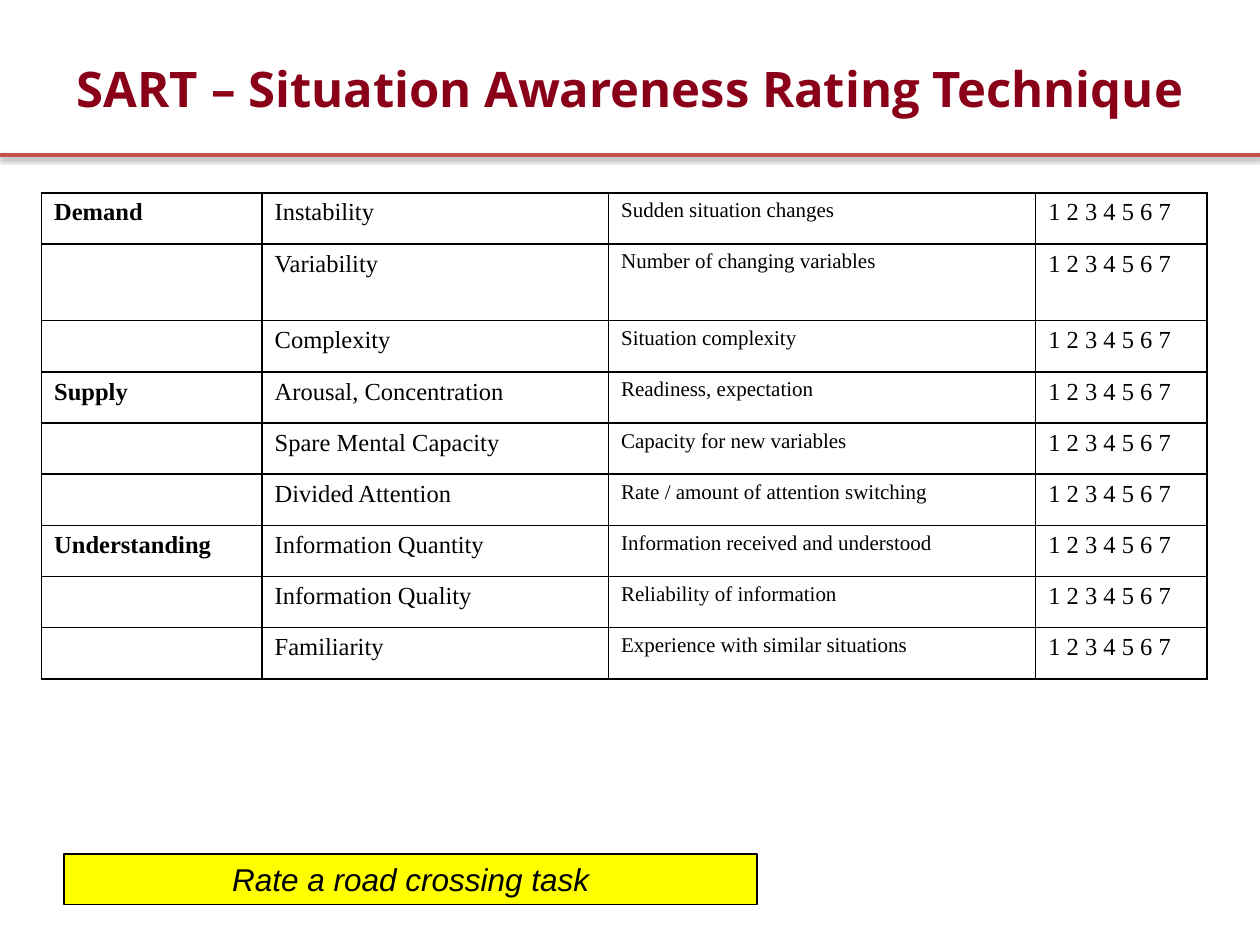
import dataclasses

import pptx
import pptx.dml.color
import pptx.enum.shapes
import pptx.enum.text
import pptx.oxml
import pptx.oxml.ns
import pptx.util

Inches = pptx.util.Inches
Pt = pptx.util.Pt
Color = pptx.dml.color.RGBColor.from_string
Align = pptx.enum.text.PP_ALIGN
Anchor = pptx.enum.text.MSO_ANCHOR
SPACE = pptx.oxml.ns.nsdecls("a")


@dataclasses.dataclass(frozen=True)
class Theme:
    head: str = "890018"
    rule: str = "C0504D"
    ink: str = "000000"
    note: str = "FFFF00"
    head_font: str = "Open Sans"
    grid_font: str = "Times New Roman"
    note_font: str = "Arial"
    head_size: int = 28
    grid_size: int = 14
    hint_size: int = 12
    note_size: int = 18
    rule_width: int = 2
    edge_width: int = 1


THEME = Theme()
SCALE = " ".join(str(mark) for mark in range(1, 8))
COLS = (1.75, 2.75, 3.39, 1.36)
TALL_ROW, TALL = 1, 0.61
GROUPS = {
    "Demand": (
        ("Instability", "Sudden situation changes"),
        ("Variability", "Number of changing variables"),
        ("Complexity", "Situation complexity"),
    ),
    "Supply": (
        ("Arousal, Concentration", "Readiness, expectation"),
        ("Spare Mental Capacity", "Capacity for new variables"),
        ("Divided Attention", "Rate / amount of attention switching"),
    ),
    "Understanding": (
        ("Information Quantity", "Information received and understood"),
        ("Information Quality", "Reliability of information"),
        ("Familiarity", "Experience with similar situations"),
    ),
}


def write(frame, text, font, size, color, bold=False, italic=False, align=Align.LEFT):
    para = frame.paragraphs[0]
    para.alignment = align
    run = para.add_run()
    run.text = text
    run.font.name = font
    run.font.size = Pt(size)
    run.font.bold = bold
    run.font.italic = italic
    run.font.color.rgb = Color(color)


def add_title(slide, left, top, width, height):
    title = slide.shapes.title
    title.left, title.top = Inches(left), Inches(top)
    title.width, title.height = Inches(width), Inches(height)
    title.text_frame.vertical_anchor = Anchor.MIDDLE
    write(title.text_frame, "SART – Situation Awareness Rating Technique",
          THEME.head_font, THEME.head_size, THEME.head, bold=True, align=Align.CENTER)


def add_rule(slide, left, top, width):
    rule = slide.shapes.add_connector(
        pptx.enum.shapes.MSO_CONNECTOR.STRAIGHT,
        Inches(left), Inches(top), Inches(left + width), Inches(top))
    rule.line.color.rgb = Color(THEME.rule)
    rule.line.width = Pt(THEME.rule_width)
    rule.element.spPr.append(pptx.oxml.parse_xml(
        f'<a:effectLst {SPACE}><a:outerShdw blurRad="{Pt(3.1)}" dist="{Pt(1.6)}" '
        f'dir="5400000" rotWithShape="0"><a:srgbClr val="{THEME.ink}">'
        '<a:alpha val="38000"/></a:srgbClr></a:outerShdw></a:effectLst>'))


def frame_cell(cell):
    """Draw the four borders, then clear the fill, in the order the XML needs."""
    props = cell._tc.get_or_add_tcPr()
    for side in "LRTB":
        props.append(pptx.oxml.parse_xml(
            f'<a:ln{side} {SPACE} w="{Pt(THEME.edge_width)}"><a:solidFill>'
            f'<a:srgbClr val="{THEME.ink}"/></a:solidFill></a:ln{side}>'))
    cell.fill.background()


def add_grid(slide, left, top, width, height):
    rows = [(group if i == 0 else "", name, hint, SCALE)
            for group, items in GROUPS.items()
            for i, (name, hint) in enumerate(items)]
    table = slide.shapes.add_table(
        len(rows), len(COLS), Inches(left), Inches(top),
        Inches(width), Inches(height)).table
    table.first_row = table.horz_banding = False
    for col, share in zip(table.columns, COLS):
        col.width = Inches(width * share / sum(COLS))
    low = (height - TALL) / (len(rows) - 1)
    for r, texts in enumerate(rows):
        table.rows[r].height = Inches(TALL if r == TALL_ROW else low)
        for c, text in enumerate(texts):
            cell = table.cell(r, c)
            frame_cell(cell)
            if text:
                size = THEME.hint_size if c == 2 else THEME.grid_size
                write(cell.text_frame, text, THEME.grid_font, size, THEME.ink,
                      bold=c == 0)


def add_note(slide, left, top, width, height):
    note = slide.shapes.add_shape(
        pptx.enum.shapes.MSO_SHAPE.RECTANGLE,
        Inches(left), Inches(top), Inches(width), Inches(height))
    note.shadow.inherit = False
    note.fill.solid()
    note.fill.fore_color.rgb = Color(THEME.note)
    note.line.color.rgb = Color(THEME.ink)
    note.line.width = Pt(THEME.edge_width)
    frame = note.text_frame
    frame.word_wrap = True
    frame.auto_size = pptx.enum.text.MSO_AUTO_SIZE.SHAPE_TO_FIT_TEXT
    frame.vertical_anchor = Anchor.TOP
    write(frame, "Rate a road crossing task", THEME.note_font, THEME.note_size,
          THEME.ink, italic=True, align=Align.CENTER)


def main():
    deck = pptx.Presentation()
    deck.slide_width, deck.slide_height = Inches(10), Inches(7.5)
    slide = deck.slides.add_slide(deck.slide_layouts.get_by_name("Title Only"))
    add_rule(slide, 0, 1.23, 10)
    add_title(slide, 0, 0.36, 10, 0.67)
    add_grid(slide, 0.33, 1.53, 9.25, 3.86)
    add_note(slide, 0.51, 6.78, 5.5, 0.4)
    deck.save("out.pptx")


if __name__ == "__main__":
    main()
